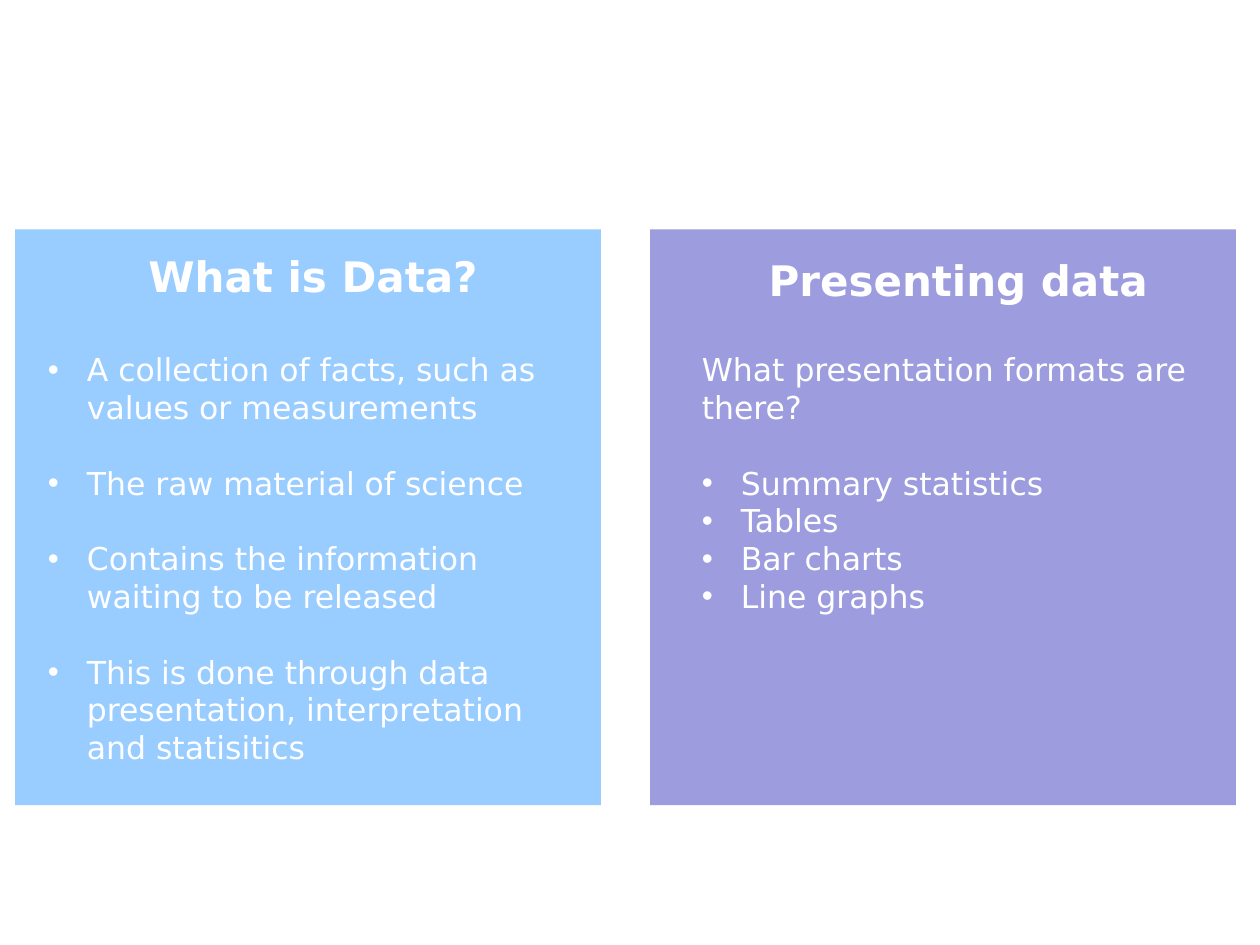
import pptx
import pptx.dml.color
import pptx.enum.shapes
import pptx.enum.text
import pptx.oxml
import pptx.oxml.ns
import pptx.util

Inches = pptx.util.Inches
Pt = pptx.util.Pt
RGBColor = pptx.dml.color.RGBColor
ALIGN = pptx.enum.text.PP_ALIGN

WHITE = RGBColor(0xFF, 0xFF, 0xFF)
BLUE = RGBColor(0x99, 0xCC, 0xFF)
VIOLET = RGBColor(0x9C, 0x9C, 0xDF)
FONT = "DejaVu Sans"
HEAD_SIZE = 24
LIST_SIZE = 18
LEADING = 1.2
LINE = LIST_SIZE * LEADING
INDENT = 0.31

# Each list item: text, has a bullet, space before in points
FACTS = [
    ("A collection of facts, such as values or measurements", True, 0),
    ("The raw material of science", True, LINE),
    ("Contains the information waiting to be released", True, LINE),
    ("This is done through data presentation, interpretation and statisitics",
     True, LINE),
]
FORMATS = [
    ("What presentation formats are there?", False, 0),
    ("Summary statistics", True, LINE),
    ("Tables", True, 0),
    ("Bar charts", True, 0),
    ("Line graphs", True, 0),
]


def add_panel(slide, left, color):
    """Add a coloured panel behind everything that holds text."""
    panel = slide.shapes.add_shape(
        pptx.enum.shapes.MSO_SHAPE.RECTANGLE,
        Inches(left), Inches(1.82), Inches(4.65), Inches(4.57))
    panel.shadow.inherit = False
    panel.fill.solid()
    panel.fill.fore_color.rgb = color
    panel.line.fill.background()
    tree = panel.element.getparent()
    tree.insert(2, panel.element)


def place(holder, left, top, width, height):
    holder.left, holder.top = Inches(left), Inches(top)
    holder.width, holder.height = Inches(width), Inches(height)
    frame = holder.text_frame
    frame.word_wrap = True
    frame.auto_size = pptx.enum.text.MSO_AUTO_SIZE.NONE
    frame.vertical_anchor = pptx.enum.text.MSO_ANCHOR.TOP
    return frame


def set_bullet(para, shown):
    props = para._p.get_or_add_pPr()
    props.set("marL", str(Inches(INDENT if shown else 0)))
    props.set("indent", str(Inches(-INDENT if shown else 0)))
    if shown:
        face = pptx.oxml.parse_xml(
            '<a:buFont %s typeface="Arial"/>' % pptx.oxml.ns.nsdecls("a"))
        mark = pptx.oxml.parse_xml(
            '<a:buChar %s char="•"/>' % pptx.oxml.ns.nsdecls("a"))
        props.extend([face, mark])
    else:
        props.append(pptx.oxml.parse_xml(
            "<a:buNone %s/>" % pptx.oxml.ns.nsdecls("a")))


def write(para, text, size, align, bullet=False, before=0, bold=False):
    set_bullet(para, bullet)
    para.alignment = align
    para.line_spacing = Pt(size * LEADING)
    para.space_before = Pt(before)
    para.space_after = Pt(0)
    run = para.add_run()
    run.text = text
    run.font.name = FONT
    run.font.size = Pt(size)
    run.font.bold = bold
    run.font.color.rgb = WHITE


def fill_head(holder, left, top, text):
    frame = place(holder, left, top, 4.41, 0.5)
    write(frame.paragraphs[0], text, HEAD_SIZE, ALIGN.CENTER, bold=True)


def fill_list(holder, left, height, items):
    frame = place(holder, left, 2.73, 4.25, height)
    for i, (text, bullet, before) in enumerate(items):
        para = frame.add_paragraph() if i else frame.paragraphs[0]
        write(para, text, LIST_SIZE, ALIGN.LEFT, bullet, before)


def main():
    deck = pptx.Presentation()
    deck.slide_width, deck.slide_height = Inches(10), Inches(7.5)
    # The comparison layout: two headings, each with a list
    slide = deck.slides.add_slide(deck.slide_layouts[4])
    title = slide.shapes.title.element
    title.getparent().remove(title)
    holders = {h.placeholder_format.idx: h for h in slide.placeholders}

    add_panel(slide, 0.12, BLUE)
    add_panel(slide, 5.16, VIOLET)
    fill_head(holders[1], 0.28, 1.94, "What is Data?")
    fill_list(holders[2], 0.28, 4.04, FACTS)
    fill_head(holders[3], 5.4, 1.97, "Presenting data")
    fill_list(holders[4], 5.47, 2.52, FORMATS)
    deck.save("out.pptx")


if __name__ == "__main__":
    main()
